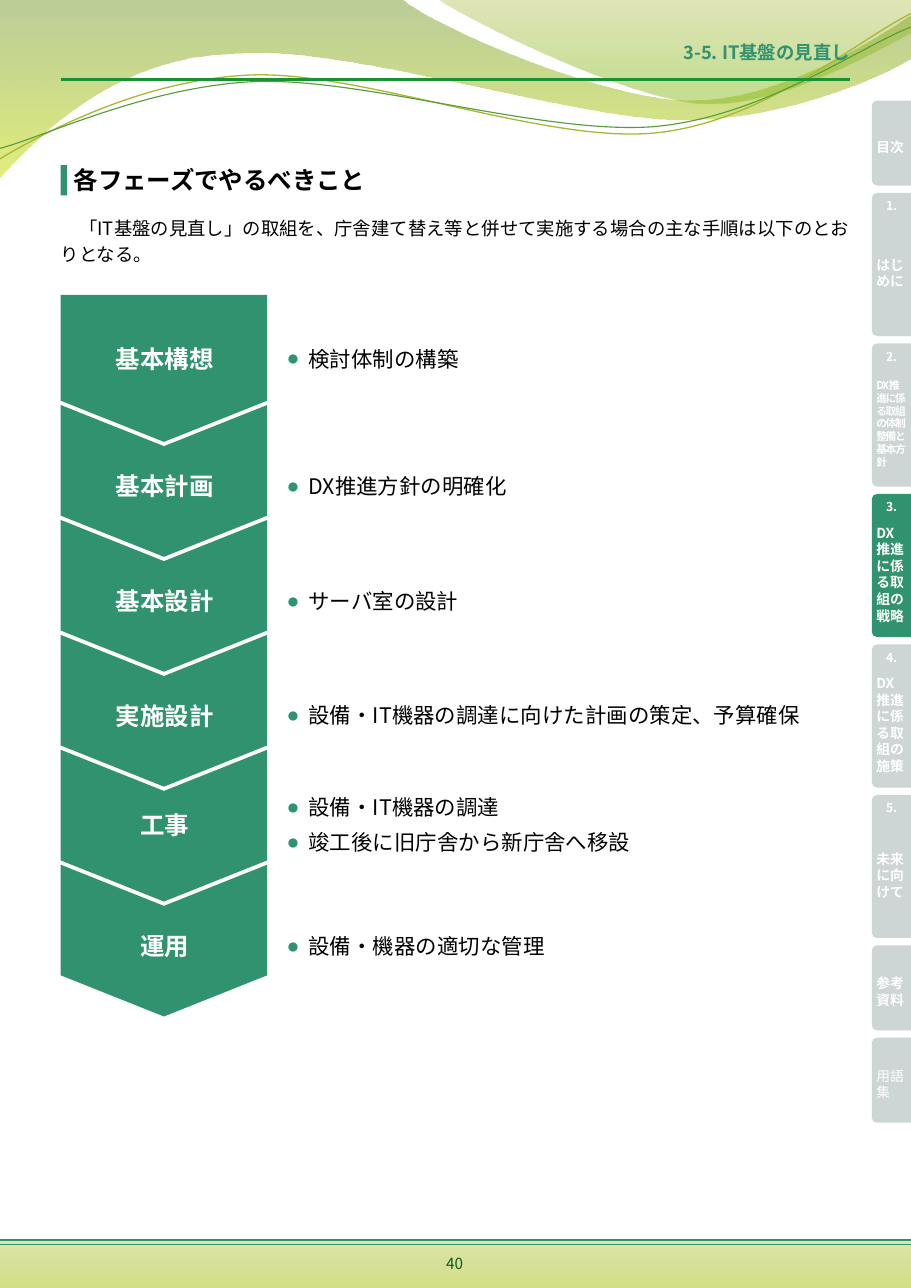
from lxml import etree
from pptx import Presentation
from pptx.dml.color import RGBColor
from pptx.enum.shapes import MSO_CONNECTOR, MSO_SHAPE
from pptx.enum.text import MSO_ANCHOR, PP_ALIGN
from pptx.oxml.ns import qn
from pptx.util import Cm, Pt

LINE = MSO_CONNECTOR.STRAIGHT
RECT = MSO_SHAPE.RECTANGLE
TOP, MIDDLE = MSO_ANCHOR.TOP, MSO_ANCHOR.MIDDLE
LEFT, CENTER = PP_ALIGN.LEFT, PP_ALIGN.CENTER
RIGHT, JUSTIFY = PP_ALIGN.RIGHT, PP_ALIGN.JUSTIFY
GREEN, GRAY, WHITE, BLACK = "31926F", "CDD6D5", "FFFFFF", "000000"


def color(code):
    return RGBColor.from_string(code)


class Page:
    font = "Noto Sans CJK JP"

    def __init__(self, slide):
        self.slide = slide
        self.shapes = slide.shapes

    def paint(self, shape, fill):
        shape.shadow.inherit = False
        shape.line.fill.background()
        if isinstance(fill, str):
            shape.fill.solid()
            shape.fill.fore_color.rgb = color(fill)
            return
        shape.fill.gradient()
        shape.fill.gradient_angle = 270
        stops = shape._element.spPr.find(".//" + qn("a:gsLst"))
        stops.clear()
        for pos, code, alpha in fill:
            stop = etree.SubElement(stops, qn("a:gs"), pos=str(pos * 1000))
            tone = etree.SubElement(stop, qn("a:srgbClr"), val=code)
            etree.SubElement(tone, qn("a:alpha"), val=str(alpha * 1000))

    def rect(self, x, y, w, h, fill):
        self.paint(self.shapes.add_shape(RECT, Cm(x), Cm(y), Cm(w), Cm(h)), fill)

    def outline(self, start, steps, close):
        pen = self.shapes.build_freeform(Cm(start[0]), Cm(start[1]), scale=1.0)
        ends = [(Cm(step[-2]), Cm(step[-1])) for step in steps]
        pen.add_line_segments(ends, close=close)
        shape = pen.convert_to_shape()
        parts = list(shape._element.spPr.iter(qn("a:lnTo")))
        for part, step in zip(parts, steps):
            if len(step) == 6:
                bend = etree.Element(qn("a:cubicBezTo"))
                for x, y in zip(step[::2], step[1::2]):
                    etree.SubElement(bend, qn("a:pt"), x=str(Cm(x) - shape.left),
                                     y=str(Cm(y) - shape.top))
                part.getparent().replace(part, bend)
        return shape

    def area(self, start, steps, fill):
        self.paint(self.outline(start, steps, True), fill)

    def curve(self, start, steps, code, width):
        shape = self.outline(start, steps, False)
        shape.shadow.inherit = False
        shape.fill.background()
        shape.line.color.rgb = color(code)
        shape.line.width = Pt(width)

    def line(self, x1, x2, y, code, width):
        line = self.shapes.add_connector(LINE, Cm(x1), Cm(y), Cm(x2), Cm(y))
        line.line.color.rgb = color(code)
        line.line.width = Pt(width)
        etree.SubElement(line._element.spPr, qn("a:effectLst"))

    def text(self, x, y, w, h, lines, size, code, bold=False, align=LEFT,
             anchor=TOP, space=None, track=None, dots=False):
        frame = self.shapes.add_textbox(Cm(x), Cm(y), Cm(w), Cm(h)).text_frame
        frame.word_wrap = True
        frame.vertical_anchor = anchor
        frame.margin_left = frame.margin_right = 0
        frame.margin_top = frame.margin_bottom = 0
        for i, words in enumerate(lines):
            para = frame.paragraphs[0] if i == 0 else frame.add_paragraph()
            if dots:
                self.dot(para)
            para.alignment = align
            if space:
                para.line_spacing = space
            run = para.add_run()
            run.text = words
            font = run.font
            font.name = self.font
            font.size = Pt(size)
            font.bold = bold
            font.color.rgb = color(code)
            props = run._r.get_or_add_rPr()
            etree.SubElement(props, qn("a:ea"), typeface=self.font)
            if track:
                props.set("spc", str(track))

    def dot(self, para):
        props = para._p.get_or_add_pPr()
        props.set("marL", str(Cm(0.5)))
        props.set("indent", str(-Cm(0.5)))
        tint = etree.SubElement(props, qn("a:buClr"))
        etree.SubElement(tint, qn("a:srgbClr"), val=GREEN)
        etree.SubElement(props, qn("a:buFont"), typeface="Arial")
        etree.SubElement(props, qn("a:buChar"), char="●")
        para.space_after = Pt(6)

    def tab(self, y, h, mark, label, fill, size, bold, track):
        end = y + h
        self.area((21, end), [
            (20.22, end), (20.15, end, 20.1, end - 0.05, 20.1, end - 0.11),
            (20.1, y + 0.11), (20.1, y + 0.05, 20.15, y, 20.22, y), (21, y)], fill)
        if mark:
            self.text(20.25, y + 0.13, 0.61, 0.33, [mark], 8, WHITE, True, CENTER, MIDDLE)
        gap = 0.52 if mark else 0.3
        self.text(20.2, y + gap, 0.71, h - gap - 0.12, [label], size, WHITE, bold,
                  anchor=MIDDLE, track=track)

    def phase(self, i, name, mid, tasks):
        y = 6.69 + 2.65 * i
        left, axis, right = 1.4, 3.78, 6.16
        head = [(axis, y + 0.95), (left, y)]
        start = (right, y)
        if i == 0:
            start, head = (right, y + 0.11), [(left, y + 0.11)]
        self.area(start, head + [(left, y + 2.55), (axis, y + 3.5), (right, y + 2.55)],
                  GREEN)
        self.text(left + 0.02, mid - 0.35, right - left, 0.7, [name], 16, WHITE, True,
                  CENTER, MIDDLE)
        self.text(6.61, mid + 0.1 - 0.4 * len(tasks), 13, 0.7 * len(tasks), tasks,
                  14, BLACK, dots=True)


def main():
    deck = Presentation()
    deck.slide_width, deck.slide_height = Cm(21), Cm(29.7)
    page = Page(deck.slides.add_slide(deck.slide_layouts[6]))

    page.area((0, -0.03), [
        (9.25, -0.03), (9.98, 0.61, 13.94, 2.31, 15.93, 2.31),
        (17.91, 2.31, 20.12, 0.94, 21.01, 0.33), (21.03, 1.32),
        (20.65, 1.6, 18.26, 2.77, 15.67, 2.77),
        (13.06, 2.74, 8, 1.02, 5.41, 1.24),
        (2.72, 1.3, 0.97, 3.02, -0.03, 4.14)],
        [(0, "69921C", 45), (100, "CCE10F", 55)])
    page.area((10.06, -0.03), [
        (10.69, 0.41, 14.33, 2.26, 16.15, 2.39),
        (17.96, 2.51, 20.19, 1.17, 21.01, 0.76), (21.01, 0)],
        [(0, "9BAA1A", 30), (80, "81BA16", 45)])
    page.curve((-0.03, 3.68), [
        (0.99, 3.07, 3.28, 1.83, 5.79, 1.73),
        (8.31, 1.63, 12.52, 3.3, 15.06, 3.07),
        (17.6, 2.84, 19.79, 0.89, 21.03, 0.3)], "A9B733", 0.85)
    page.curve((-0.03, 3.43), [
        (0.97, 3.18, 3.4, 1.98, 5.92, 1.88),
        (8.43, 1.8, 12.57, 3.12, 15.09, 2.92),
        (17.6, 2.69, 19.79, 1.09, 21.03, 0.61)], "549E39", 0.75)

    page.rect(0, 28.6, 21, 1.1,
              [(0, "DDE6A6", 100), (50, "D7E098", 100), (100, "D4E084", 100)])
    page.line(0, 21, 28.6, GREEN, 1.5)
    page.line(0, 21, 28.7, GREEN, 1)
    page.line(1.4, 19.6, 1.83, "199332", 1.5)

    y = 2.32
    for mark, label, fill, size, bold, track in [
        ("", "目次", GRAY, 9, True, None),
        ("1.", "はじめに", GRAY, 9, True, None),
        ("2.", "DX推進に係る取組の体制整備と基本方針", GRAY, 7, True, -80),
        ("3.", "DX推進に係る取組の戦略", GREEN, 9, True, None),
        ("4.", "DX推進に係る取組の施策", GRAY, 9, True, None),
        ("5.", "未来に向けて", GRAY, 9, True, None),
        ("", "参考資料", GRAY, 9, True, None),
        ("", "用語集", GRAY, 9, False, None),
    ]:
        h = 3.3 if mark else 1.96
        page.tab(y, h, mark, label, fill, size, bold, track)
        y += h + 0.17

    page.text(8.12, 28.91, 4.72, 0.43, ["40"], 10, "0F591F", align=CENTER, anchor=MIDDLE)
    page.text(13.84, 1, 5.75, 0.46, ["3-5. IT基盤の見直し"], 12, GREEN, True,
              RIGHT, space=0.9)
    page.rect(1.4, 3.81, 0.15, 0.7, GREEN)
    page.text(1.7, 3.81, 17.9, 0.7, ["各フェーズでやるべきこと"], 16, BLACK, True)
    page.text(1.4, 4.9, 18.2, 1.22, [
        "　「IT基盤の見直し」の取組を、庁舎建て替え等と併せて実施する場合の"
        "主な手順は以下のとおりとなる。"], 12, BLACK, align=JUSTIFY, space=1.2)

    for i, (name, mid, tasks) in enumerate([
        ("基本構想", 8.27, ["検討体制の構築"]),
        ("基本計画", 11.21, ["DX推進方針の明確化"]),
        ("基本設計", 13.86, ["サーバ室の設計"]),
        ("実施設計", 16.5, ["設備・IT機器の調達に向けた計画の策定、予算確保"]),
        ("工事", 19.01, ["設備・IT機器の調達", "竣工後に旧庁舎から新庁舎へ移設"]),
        ("運用", 21.81, ["設備・機器の適切な管理"]),
    ]):
        page.phase(i, name, mid, tasks)

    deck.save("out.pptx")


if __name__ == "__main__":
    main()
